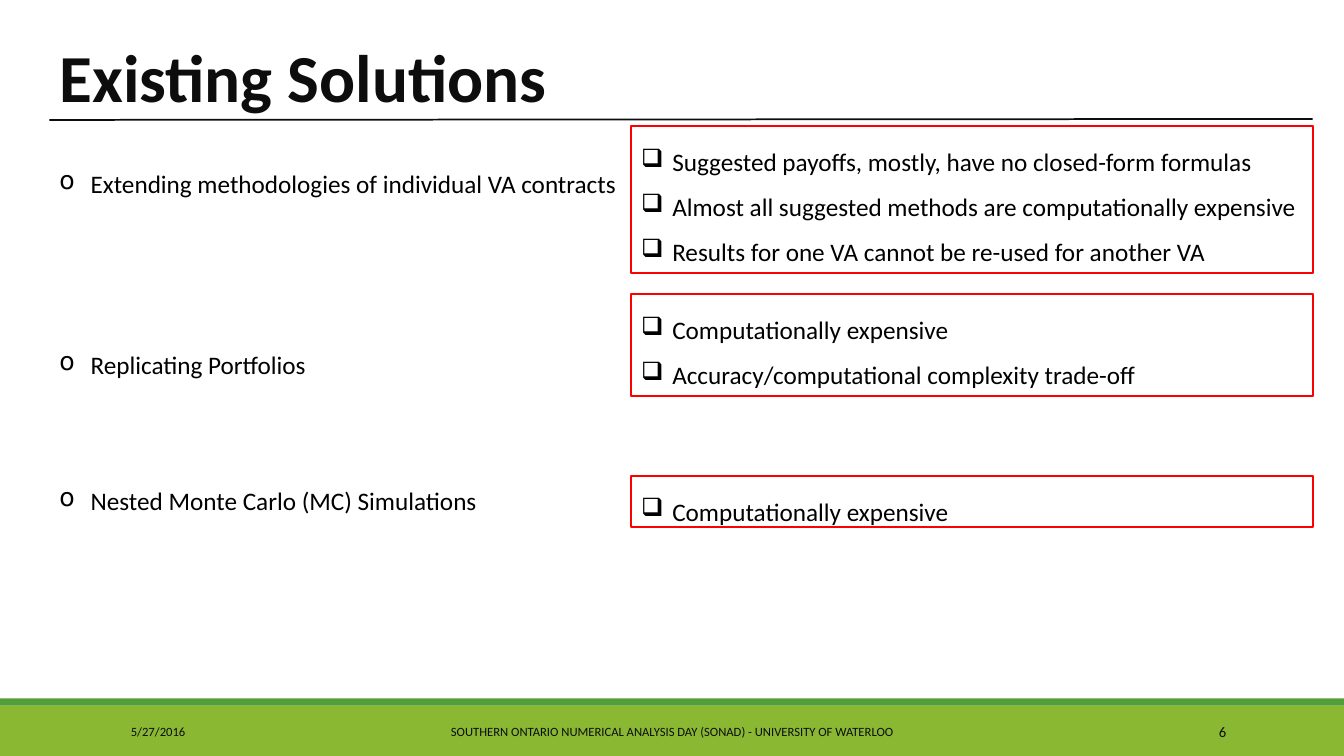
"""Build the "Existing Solutions" slide."""
from lxml.etree import SubElement
from pptx import Presentation
from pptx.dml.color import RGBColor
from pptx.enum.shapes import MSO_CONNECTOR, MSO_SHAPE
from pptx.enum.text import MSO_ANCHOR, MSO_AUTO_SIZE, PP_ALIGN
from pptx.oxml.ns import qn
from pptx.util import Inches, Pt

TITLE = "Existing Solutions"
INK, BLACK, WHITE, RED = "0D0D0D", "000000", "FFFFFF", "FF0000"
BANDS = [(7, 0.5, "8AB833"), (6.93, 0.07, "549E39")]
SOLUTIONS = [
    ("Extending methodologies of individual VA contracts", 0),
    ("Replicating Portfolios", 3),
    ("Nested Monte Carlo (MC) Simulations", 2),
]
DRAWBACKS = [
    (1.25, 1.46, [
        "Suggested payoffs, mostly, have no closed-form formulas",
        "Almost all suggested methods are computationally expensive",
        "Results for one VA cannot be re-used for another VA",
    ]),
    (2.92, 1.01, [
        "Computationally expensive",
        "Accuracy/computational complexity trade-off",
    ]),
    (4.72, 0.51, ["Computationally expensive"]),
]
FOOTERS = [
    (1.2, 2.7, "5/27/2016", 9, PP_ALIGN.LEFT),
    (4.03, 5.27, "SOUTHERN ONTARIO NUMERICAL ANALYSIS DAY (SONAD) - UNIVERSITY OF WATERLOO",
     9, PP_ALIGN.CENTER),
    (10.83, 1.43, "6", 10.5, PP_ALIGN.RIGHT),
]
LEFT, BOX_LEFT, BOX_WIDTH = 0.49, 6.26, 6.76
LINE_PITCH = 32.3


def color(value):
    return RGBColor.from_string(value)


def format_text(paragraph, size, ink, bold=False, align=PP_ALIGN.LEFT):
    paragraph.alignment = align
    for run in paragraph.runs:
        font = run.font
        font.name, font.size, font.bold = "Calibri", Pt(size), bold
        font.color.rgb = color(ink)


def add_box(slide, left, top, width, height, fill, outline=None):
    shape = slide.shapes.add_shape(
        MSO_SHAPE.RECTANGLE, Inches(left), Inches(top), Inches(width), Inches(height))
    shape.shadow.inherit = False
    shape.fill.solid()
    shape.fill.fore_color.rgb = color(fill)
    if outline:
        shape.line.color.rgb = color(outline)
        shape.line.width = Pt(1.25)
    else:
        shape.line.fill.background()
    return shape


def add_text_box(slide, left, top, width, height):
    shape = slide.shapes.add_textbox(
        Inches(left), Inches(top), Inches(width), Inches(height))
    shape.text_frame.word_wrap = True
    return shape.text_frame


def fill_list(frame, lines, bullet):
    frame.vertical_anchor = MSO_ANCHOR.TOP
    frame.text = "\n".join(lines)
    for paragraph in frame.paragraphs:
        format_text(paragraph, 18, BLACK)
        paragraph.line_spacing = 1.5
        properties = paragraph._p.get_or_add_pPr()
        properties.set("marL", str(Inches(0.31)))
        properties.set("indent", str(-Inches(0.31)))
        SubElement(properties, qn("a:buChar"), char=bullet)


def add_title(slide):
    title = slide.shapes.title
    title.left, title.top = Inches(LEFT), Inches(0.3)
    title.width, title.height = Inches(12.22), Inches(0.91)
    frame = title.text_frame
    frame.text = TITLE
    frame.auto_size = MSO_AUTO_SIZE.NONE
    frame.vertical_anchor = MSO_ANCHOR.TOP
    format_text(frame.paragraphs[0], 48, INK, bold=True)
    rule = slide.shapes.add_connector(
        MSO_CONNECTOR.STRAIGHT, Inches(LEFT), Inches(1.19), Inches(13.02), Inches(1.18))
    rule.line.color.rgb = color(INK)
    rule.line.width = Pt(1.25)
    SubElement(rule._element.spPr, qn("a:effectLst"))


def main():
    presentation = Presentation()
    presentation.slide_width, presentation.slide_height = Inches(13.33), Inches(7.5)
    slide = presentation.slides.add_slide(presentation.slide_layouts[5])
    for top, height, fill in BANDS:
        add_box(slide, 0, top, 13.33, height, fill)
    add_title(slide)

    solutions = add_text_box(slide, LEFT, 1.47, 6.11, 3.74)
    fill_list(solutions, [line for line, _ in SOLUTIONS], "o")
    for paragraph, (_, gap) in zip(solutions.paragraphs, SOLUTIONS):
        paragraph.space_before = Pt(gap * LINE_PITCH)

    for top, height, lines in DRAWBACKS:
        box = add_box(slide, BOX_LEFT, top, BOX_WIDTH, height, WHITE, RED)
        fill_list(box.text_frame, lines, "❑")

    for left, width, line, size, align in FOOTERS:
        frame = add_text_box(slide, left, 7.06, width, 0.4)
        frame.vertical_anchor = MSO_ANCHOR.MIDDLE
        frame.text = line
        format_text(frame.paragraphs[0], size, INK, align=align)
    presentation.save("out.pptx")


if __name__ == "__main__":
    main()
